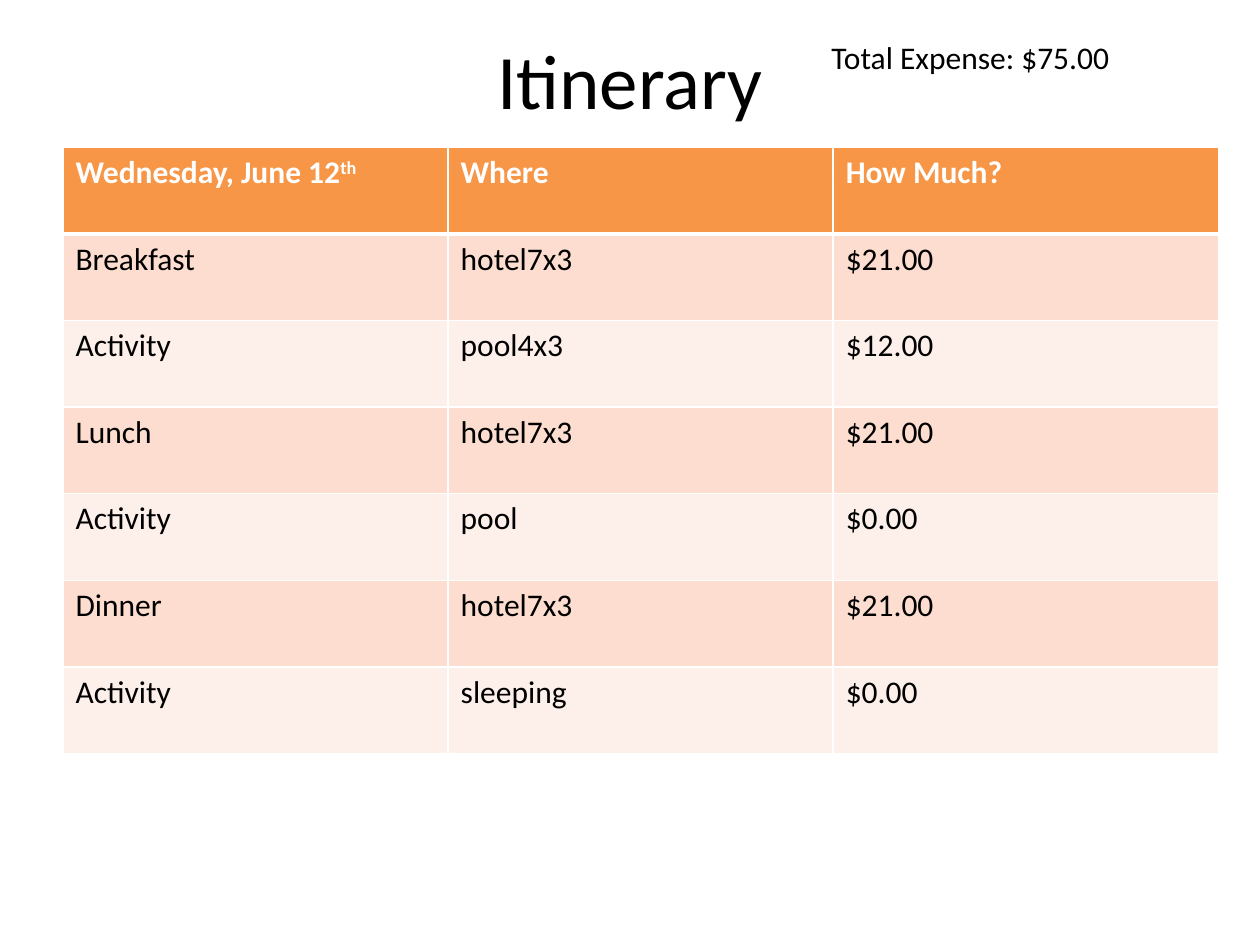
from pptx import Presentation
from pptx import util as u
from pptx.dml.color import RGBColor
from pptx.enum import text
from pptx.oxml import xmlchemy

BLACK = RGBColor(0x00, 0x00, 0x00)
WHITE = RGBColor(0xFF, 0xFF, 0xFF)
ORANGE = RGBColor(0xF7, 0x96, 0x46)
PEACH = RGBColor(0xFC, 0xDD, 0xCF)
CREAM = RGBColor(0xFD, 0xEF, 0xE9)

HEAD = ["Wednesday, June 12", "Where", "How Much?"]
PLANS = [
    ["Breakfast", "hotel7x3", "$21.00"],
    ["Activity", "pool4x3", "$12.00"],
    ["Lunch", "hotel7x3", "$21.00"],
    ["Activity", "pool", "$0.00"],
    ["Dinner", "hotel7x3", "$21.00"],
    ["Activity", "sleeping", "$0.00"],
]


class Page:
    def __init__(self, slide):
        self.slide = slide
        self.style = {"name": "Calibri", "size": u.Pt(18), "bold": False}

    def put(self, para, words, color=BLACK, **extra):
        run = para.add_run()
        run.text = words
        for key, value in {**self.style, **extra}.items():
            setattr(run.font, key, value)
        run.font.color.rgb = color
        return run

    def label(self, box, words, align, anchor, **extra):
        frame = self.slide.shapes.add_textbox(*map(u.Inches, box)).text_frame
        for key, value in {"word_wrap": True, "vertical_anchor": anchor}.items():
            setattr(frame, key, value)
        para = frame.paragraphs[0]
        para.alignment = align
        self.put(para, words, **extra)

    def border(self, cell, widths):
        props = cell._tc.get_or_add_tcPr()
        for spot, (side, width) in enumerate(widths.items()):
            line = xmlchemy.OxmlElement(f"a:ln{side}")
            line.set("w", str(u.Pt(width)))
            fill = xmlchemy.OxmlElement("a:solidFill")
            tint = xmlchemy.OxmlElement("a:srgbClr")
            tint.set("val", str(WHITE))
            fill.append(tint)
            line.append(fill)
            props.insert(spot, line)

    def table(self, box, rows):
        shape = self.slide.shapes.add_table(
            len(rows), len(rows[0]), *map(u.Inches, box))
        grid = shape.table
        for r, row in enumerate(rows):
            top = r == 0
            shade = ORANGE if top else PEACH if r % 2 else CREAM
            for c, words in enumerate(row):
                cell = grid.cell(r, c)
                cell.fill.solid()
                cell.fill.fore_color.rgb = shade
                self.border(cell, {"L": 1, "R": 1, "T": 3 if r == 1 else 1,
                                   "B": 3 if top else 1})
                self.put(cell.text_frame.paragraphs[0], words,
                         WHITE if top else BLACK, bold=top)
        return grid

    def raised(self, cell, words):
        run = self.put(cell.text_frame.paragraphs[0], words, WHITE, bold=True)
        run._r.get_or_add_rPr().set("baseline", "30000")


def main():
    deck = Presentation()
    deck.slide_width, deck.slide_height = u.Inches(10), u.Inches(7.5)
    page = Page(deck.slides.add_slide(deck.slide_layouts[6]))
    page.label((0.5, 0, 9, 1.25), "Itinerary", text.PP_ALIGN.CENTER,
               text.MSO_ANCHOR.MIDDLE, size=u.Pt(44))
    page.label((6.5, 0.25, 3.08, 0.4), "Total Expense: $75.00",
               text.PP_ALIGN.LEFT, text.MSO_ANCHOR.TOP)
    grid = page.table((0.5, 1.17, 9.17, 4.81), [HEAD, *PLANS])
    page.raised(grid.cell(0, 0), "th")
    deck.save("out.pptx")


if __name__ == "__main__":
    main()
